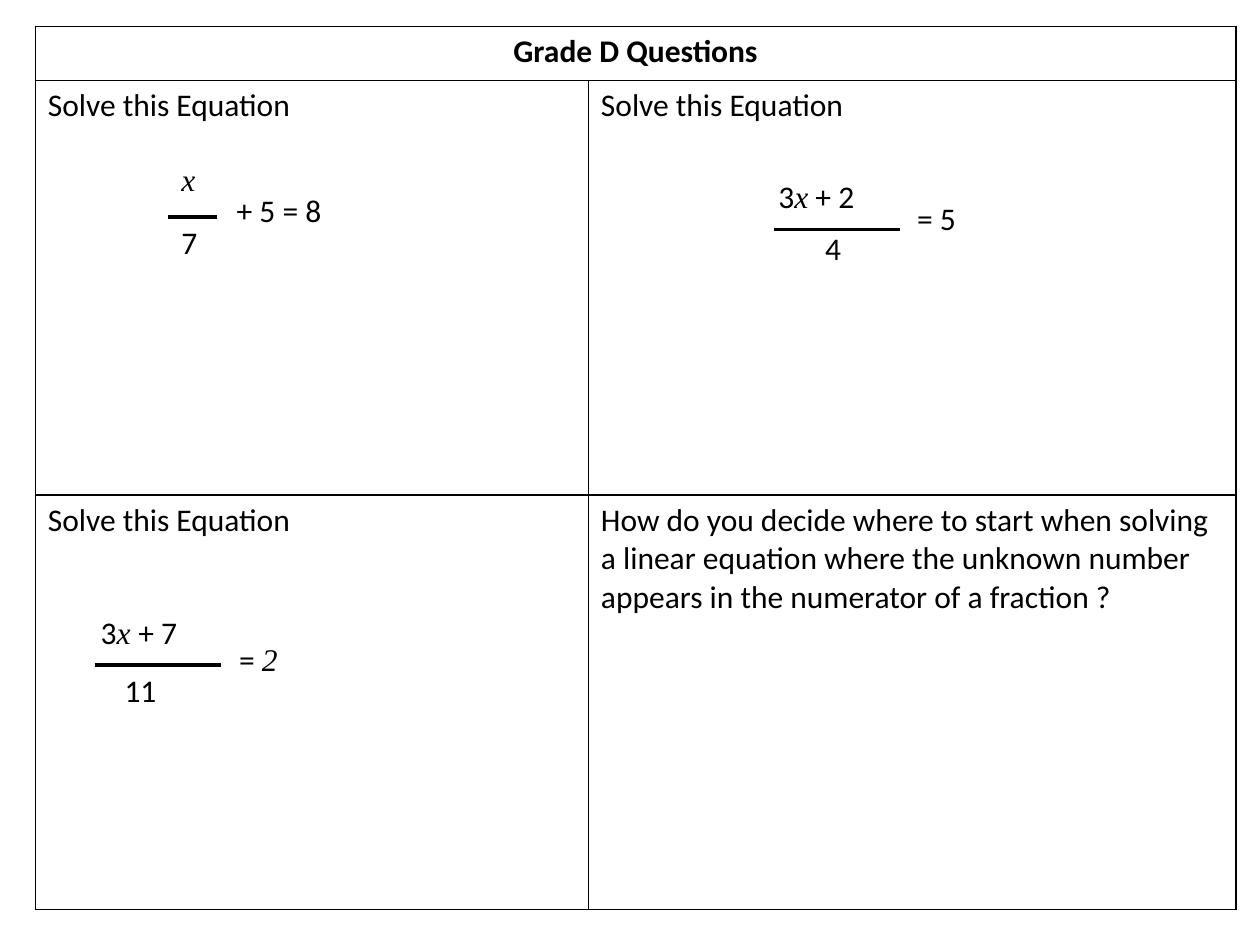
from lxml.etree import SubElement
from pptx import Presentation
from pptx.dml.color import RGBColor
from pptx.enum.shapes import MSO_CONNECTOR
from pptx.enum.text import MSO_AUTO_SIZE, PP_ALIGN
from pptx.oxml import parse_xml
from pptx.oxml.ns import nsdecls, qn
from pptx.util import Inches, Pt

INK = "000000"


def color(value):
    return RGBColor.from_string(value)


class Worksheet:
    """Holds the text style and the current slide."""

    font, math_font, size = "Calibri", "Times New Roman", 18

    def __init__(self, page):
        self.page = page

    def style(self, span, bold=False, math=False):
        span.font.name = self.math_font if math else self.font
        span.font.size = Pt(self.size)
        span.font.bold = bold
        span.font.italic = math
        span.font.color.rgb = color(INK)

    def border(self, cell):
        properties = cell._tc.get_or_add_tcPr()
        for index, side in enumerate(("lnL", "lnR", "lnT", "lnB")):
            properties.insert(index, parse_xml(
                f'<a:{side} {nsdecls("a")} w="{Pt(1)}"><a:solidFill>'
                f'<a:srgbClr val="{INK}"/></a:solidFill></a:{side}>'))

    def grid(self, left, top, widths, heights, rows):
        frame = self.page.shapes.add_table(
            len(heights), len(widths), Inches(left), Inches(top),
            Inches(sum(widths)), Inches(sum(heights)))
        table = frame.table
        table.first_row = table.horz_banding = False
        for column, width in zip(table.columns, widths):
            column.width = Inches(width)
        for row, height in zip(table.rows, heights):
            row.height = Inches(height)
        for cell in table.iter_cells():
            cell.fill.background()
            self.border(cell)
        # The heading runs across every column
        table.cell(0, 0).merge(table.cell(0, len(widths) - 1))
        for r, texts in enumerate(rows):
            for c, text in enumerate(texts):
                para = table.cell(r, c).text_frame.paragraphs[0]
                para.text = text
                self.style(para.runs[0], bold=r == 0)
                if r == 0:
                    para.alignment = PP_ALIGN.CENTER

    def label(self, shapes, left, top, width, height, spans):
        """Each span is a (text, is_math) pair."""
        box = shapes.add_textbox(
            Inches(left), Inches(top), Inches(width), Inches(height))
        frame = box.text_frame
        frame.word_wrap = False
        frame.auto_size = MSO_AUTO_SIZE.SHAPE_TO_FIT_TEXT
        for text, math in spans:
            span = frame.paragraphs[0].add_run()
            span.text = text
            self.style(span, math=math)

    def bar(self, shapes, left, top, width, weight):
        line = shapes.add_connector(
            MSO_CONNECTOR.STRAIGHT, Inches(left), Inches(top),
            Inches(left + width), Inches(top))
        line.line.color.rgb = color(INK)
        line.line.width = Pt(weight)
        SubElement(line._element.spPr, qn("a:effectLst"))

    def equation(self, bar, labels):
        shapes = self.page.shapes.add_group_shape().shapes
        self.bar(shapes, *bar)
        for label in labels:
            self.label(shapes, *label)


def main():
    deck = Presentation()
    deck.slide_width, deck.slide_height = Inches(10), Inches(7.5)
    sheet = Worksheet(deck.slides.add_slide(deck.slide_layouts[6]))

    # Question grid
    task = "Solve this Equation"
    sheet.grid(0.28, 0.21, (4.39, 5.14), (0.43, 3.29, 3.29), [
        ["Grade D Questions"],
        [task, task],
        [task, "How do you decide where to start when solving a linear "
               "equation where the unknown number appears in the numerator "
               "of a fraction ?"],
    ])

    # Equations: fraction bar, then numerator, denominator and right part
    sheet.equation((1.33, 1.72, 0.39, 2.25), [
        (1.34, 1.22, 0.35, 0.5, [("x", True)]),
        (1.34, 1.72, 0.39, 0.5, [("7", False)]),
        (1.78, 1.47, 0.88, 0.4, [("+ 5 = 8", False)]),
    ])
    sheet.equation((6.14, 1.82, 1, 1.5), [
        (6.08, 1.36, 1.1, 0.5, [("3", False), ("x", True), (" + 2", False)]),
        (6.45, 1.77, 0.39, 0.5, [("4", False)]),
        (7.18, 1.53, 0.51, 0.4, [("= 5", False)]),
    ])
    sheet.equation((0.75, 5.28, 1, 2.25), [
        (0.7, 4.82, 0.81, 0.4, [("3", False), ("x ", True), ("+ 7", False)]),
        (0.89, 5.28, 0.46, 0.4, [("11", False)]),
        (1.8, 5.03, 0.57, 0.4, [("= ", False), ("2", True)]),
    ])

    deck.save("out.pptx")


if __name__ == "__main__":
    main()
